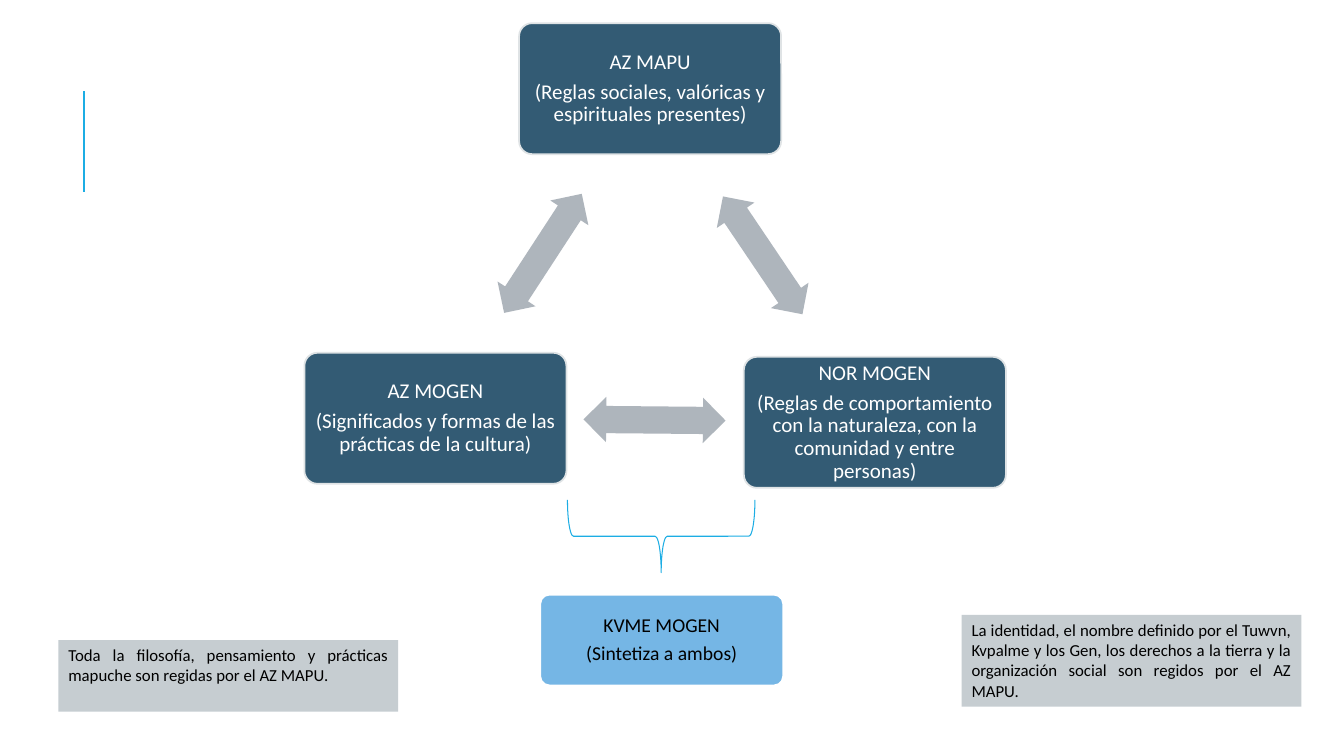
from dataclasses import dataclass

from pptx import Presentation
from pptx.dml.color import RGBColor
from pptx.enum.shapes import MSO_CONNECTOR as Connector, MSO_SHAPE as Preset
from pptx.enum.text import MSO_ANCHOR as Anchor, PP_ALIGN as Align
from pptx.oxml.ns import qn
from pptx.shapes.autoshape import Shape
from pptx.slide import Slide
from pptx.util import Inches, Pt

# The page is a grid of 40 by 22.5 square cells.
CELL = Inches(1) / 3
COLUMNS, ROWS = 40, 22.5


@dataclass(frozen=True)
class Theme:
    font: str = "Calibri"
    card_size: float = 15
    result_size: float = 14
    note_size: float = 12
    card: str = "335B74"
    card_edge: str = "DFE3E5"
    result: str = "75B6E5"
    arrow: str = "AEB5BC"
    note: str = "C6CDD1"
    accent: str = "1CADE4"
    white: str = "FFFFFF"
    black: str = "000000"


THEME = Theme()


@dataclass(frozen=True)
class Area:
    column: float
    row: float
    columns: float
    rows: float


@dataclass(frozen=True)
class Card:
    area: Area
    title: str
    detail: str
    fill: str = THEME.card
    edge: str = THEME.card_edge
    ink: str = THEME.white
    size: float = THEME.card_size


@dataclass(frozen=True)
class Arrow:
    center_column: float
    center_row: float
    angle: float


@dataclass(frozen=True)
class Note:
    area: Area
    text: str


CARD_SPAN = (7.8, 3.9)
CARDS = [
    Card(Area(15.45, 0.69, *CARD_SPAN), "AZ MAPU",
         "(Reglas sociales, valóricas y espirituales presentes)"),
    Card(Area(22.14, 10.62, *CARD_SPAN), "NOR MOGEN",
         "(Reglas de comportamiento con la naturaleza, con la comunidad y entre personas)"),
    Card(Area(9.06, 10.5, *CARD_SPAN), "AZ MOGEN",
         "(Significados y formas de las prácticas de la cultura)"),
    Card(Area(16.08, 17.7, 7.23, 2.7), "KVME MOGEN", "(Sintetiza a ambos)",
         THEME.result, THEME.white, THEME.black, THEME.result_size),
]
ARROW_SPAN = (4.23, 1.35)
ARROWS = [Arrow(22.7, 7.6, 56), Arrow(19.48, 12.5, 180.5), Arrow(16.16, 7.54, 303.1)]
BRACE = Area(18.6, 13.17, 2.16, 5.58)
NOTES = [
    Note(Area(1.74, 19.05, 10.11, 2.13),
         "Toda la filosofía, pensamiento y prácticas mapuche son regidas por el AZ MAPU."),
    Note(Area(28.62, 18.3, 10.11, 2.73),
         "La identidad, el nombre definido por el Tuwvn, Kvpalme y los Gen, los derechos "
         "a la tierra y la organización social son regidos por el AZ MAPU."),
]


def cells(count: float) -> int:
    return round(count * CELL)


def add_preset(page: Slide, preset: Preset, area: Area, fill: str = "",
               edge: str = "", edge_width: float = 1.25) -> Shape:
    """Add a shadowless shape; an empty colour means no fill or no line."""
    shape = page.shapes.add_shape(preset, cells(area.column), cells(area.row),
                                  cells(area.columns), cells(area.rows))
    shape.shadow.inherit = False
    if fill:
        shape.fill.solid()
        shape.fill.fore_color.rgb = RGBColor.from_string(fill)
    else:
        shape.fill.background()
    if edge:
        shape.line.color.rgb = RGBColor.from_string(edge)
        shape.line.width = Pt(edge_width)
    else:
        shape.line.fill.background()
    return shape


def write(shape: Shape, lines: list[str], size: float, ink: str, align: Align) -> None:
    frame = shape.text_frame
    frame.word_wrap = True
    frame.text = "\n".join(lines)
    for para in frame.paragraphs:
        para.alignment = align
        para.font.name = THEME.font
        para.font.size = Pt(size)
        para.font.color.rgb = RGBColor.from_string(ink)


def add_card(page: Slide, card: Card) -> None:
    box = add_preset(page, Preset.ROUNDED_RECTANGLE, card.area, card.fill, card.edge)
    box.adjustments[0] = 0.1
    write(box, [card.title, card.detail], card.size, card.ink, Align.CENTER)
    frame = box.text_frame
    frame.vertical_anchor = Anchor.MIDDLE
    frame.margin_left = frame.margin_right = Inches(0.06)
    frame.margin_top = frame.margin_bottom = Inches(0.06)
    for para in frame.paragraphs:
        para.line_spacing = 0.9
        para.space_after = Pt(0.35 * card.size)


def add_arrow(page: Slide, arrow: Arrow) -> None:
    width, height = ARROW_SPAN
    area = Area(arrow.center_column - width / 2, arrow.center_row - height / 2, width, height)
    shape = add_preset(page, Preset.LEFT_RIGHT_ARROW, area, THEME.arrow)
    shape.adjustments[0] = 0.6
    shape.adjustments[1] = 0.5
    shape.rotation = arrow.angle


def add_note(page: Slide, note: Note) -> None:
    box = add_preset(page, Preset.RECTANGLE, note.area, THEME.note)
    write(box, [note.text], THEME.note_size, THEME.black, Align.JUSTIFY)
    box.text_frame.vertical_anchor = Anchor.TOP


def add_accent_line(page: Slide) -> None:
    line = page.shapes.add_connector(Connector.STRAIGHT, cells(2.5), cells(5.7),
                                     cells(2.5), cells(2.7))
    line.line.color.rgb = RGBColor.from_string(THEME.accent)
    line.line.width = Pt(1.5)
    properties = line.element.spPr
    properties.append(properties.makeelement(qn("a:effectLst"), {}))


def main() -> None:
    deck = Presentation()
    deck.slide_width, deck.slide_height = cells(COLUMNS), cells(ROWS)
    page = deck.slides.add_slide(deck.slide_layouts[6])
    add_accent_line(page)
    for card in CARDS:
        add_card(page, card)
    for arrow in ARROWS:
        add_arrow(page, arrow)
    brace = add_preset(page, Preset.LEFT_BRACE, BRACE, edge=THEME.accent, edge_width=0.75)
    brace.rotation = 270
    for note in NOTES:
        add_note(page, note)
    deck.save("out.pptx")


if __name__ == "__main__":
    main()
